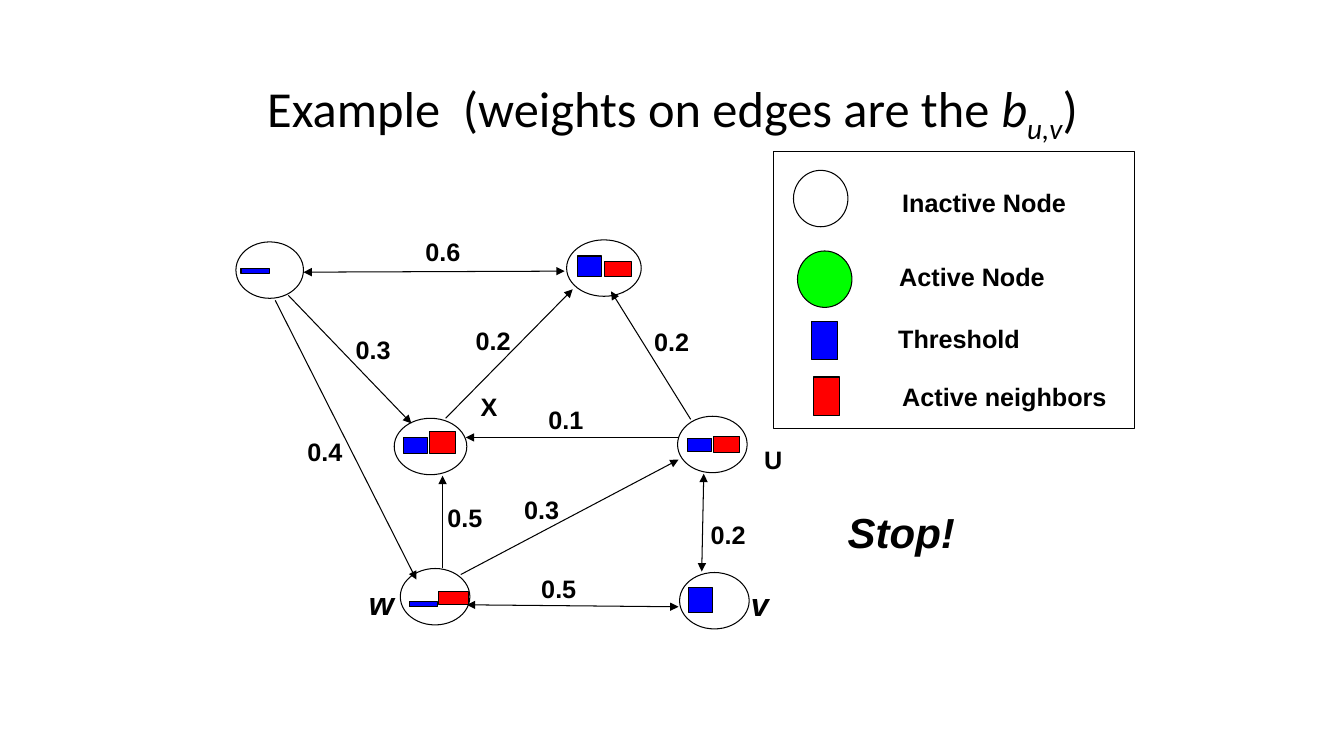
from dataclasses import dataclass
from typing import NamedTuple, Optional

from lxml import etree
from pptx import Presentation
from pptx import util as u
from pptx.dml.color import RGBColor
from pptx.enum import shapes, text
from pptx.oxml.ns import qn

PX = 9144  # EMU per px, 100 px to the inch


@dataclass(frozen=True)
class Theme:
    ink: str = "000000"
    inactive: str = "FFFFFF"
    active: str = "00FF00"
    threshold: str = "0000FF"
    neighbors: str = "FF0000"
    title_font: str = "Calibri"
    body_font: str = "Arial"
    title_size: int = 36
    stop_size: int = 30
    node_size: int = 23
    label_size: int = 18
    line_width: float = 0.75


class Box(NamedTuple):
    x: int
    y: int
    w: int
    h: int


class Node(NamedTuple):
    box: Box
    threshold: Box
    neighbors: Optional[Box] = None


class Edge(NamedTuple):
    start: tuple[int, int]
    end: tuple[int, int]
    weight: str
    label_at: tuple[int, int]
    both: bool = False


class Key(NamedTuple):
    shape: shapes.MSO_SHAPE
    box: Box
    fill: str
    label: str
    label_box: Box


class Label(NamedTuple):
    words: str
    box: Box
    size: int
    italic: bool = False


T = Theme()
OVAL, RECT = shapes.MSO_SHAPE.OVAL, shapes.MSO_SHAPE.RECTANGLE

NODES = [
    Node(Box(234, 240, 67, 56), Box(239, 266, 28, 5)),
    Node(Box(562, 238, 74, 56), Box(573, 254, 24, 20), Box(600, 259, 26, 15)),
    Node(Box(391, 415, 72, 56), Box(400, 434, 24, 16), Box(426, 428, 26, 22)),
    Node(Box(672, 413, 69, 56), Box(682, 435, 24, 13), Box(708, 433, 26, 16)),
    Node(Box(397, 564, 69, 56), Box(406, 597, 28, 5), Box(435, 587, 30, 13)),
    Node(Box(674, 568, 69, 56), Box(683, 583, 24, 25)),
]
EDGES = [
    Edge((463, 600), (673, 602), "0.5", (527, 564), both=True),
    Edge((457, 570), (673, 456), "0.3", (510, 486)),
    Edge((439, 564), (439, 472), "0.5", (434, 493)),
    Edge((672, 434), (462, 434), "0.1", (534, 396)),
    Edge((273, 298), (413, 575), "0.4", (295, 428)),
    Edge((286, 293), (408, 420), "0.3", (343, 327)),
    Edge((442, 415), (568, 287), "0.2", (462, 318)),
    Edge((301, 270), (560, 269), "0.6", (412, 230), both=True),
    Edge((685, 416), (606, 289), "0.2", (639, 319)),
    Edge((698, 470), (696, 567), "0.2", (695, 510), both=True),
]
LEGEND = Box(767, 150, 358, 275)
KEYS = [
    Key(OVAL, Box(787, 169, 54, 56), T.inactive, "Inactive Node", Box(885, 181, 183, 40)),
    Key(OVAL, Box(791, 249, 54, 56), T.active, "Active Node", Box(882, 254, 165, 40)),
    Key(RECT, Box(805, 319, 26, 38), T.threshold, "Threshold", Box(881, 316, 141, 40)),
    Key(RECT, Box(807, 374, 26, 38), T.neighbors, "Active neighbors", Box(885, 373, 223, 40)),
]
LABELS = [
    Label("X", Box(467, 383, 44, 40), T.label_size),
    Label("U", Box(748, 436, 44, 40), T.label_size),
    Label("w", Box(356, 574, 38, 48), T.node_size, True),
    Label("v", Box(735, 575, 34, 48), T.node_size, True),
    Label("Stop!", Box(831, 498, 143, 60), T.stop_size, True),
]


def emu(*lengths: int) -> list[u.Emu]:
    return [u.Emu(n * PX) for n in lengths]


def add_figure(s, kind: shapes.MSO_SHAPE, box: Box, fill: Optional[str] = None) -> None:
    sp = s.shapes.add_shape(kind, *emu(*box))
    sp.shadow.inherit = False
    if fill:
        sp.fill.solid()
        sp.fill.fore_color.rgb = RGBColor.from_string(fill)
    else:
        sp.fill.background()
    sp.line.color.rgb = RGBColor.from_string(T.ink)
    sp.line.width = u.Pt(T.line_width)


def style_run(r, font: str, size: int, bold: bool, italic: bool) -> None:
    r.font.name, r.font.size = font, u.Pt(size)
    r.font.bold, r.font.italic = bold, italic
    r.font.color.rgb = RGBColor.from_string(T.ink)


def add_label(s, label: Label, wrap: bool = True) -> None:
    tf = s.shapes.add_textbox(*emu(*label.box)).text_frame
    tf.word_wrap = wrap
    tf.text = label.words
    style_run(tf.paragraphs[0].runs[0], T.body_font, label.size, True, label.italic)


def add_edge(s, edge: Edge) -> None:
    line = s.shapes.add_connector(
        shapes.MSO_CONNECTOR.STRAIGHT, *emu(*edge.start, *edge.end))
    line.line.color.rgb = RGBColor.from_string(T.ink)
    line.line.width = u.Pt(T.line_width)
    ln = line.line._get_or_add_ln()
    for end in ("a:headEnd", "a:tailEnd") if edge.both else ("a:tailEnd",):
        etree.SubElement(ln, qn(end), type="triangle")
    etree.SubElement(line._element.spPr, qn("a:effectLst"))


def add_title(s) -> None:
    tf = s.shapes.add_textbox(*emu(217, 30, 900, 161)).text_frame
    tf.word_wrap = True
    tf.vertical_anchor = text.MSO_ANCHOR.MIDDLE
    p = tf.paragraphs[0]
    p.alignment = text.PP_ALIGN.CENTER
    for words, italic, subscript in [
        ("Example  (weights on edges are the ", False, False),
        ("b", True, False),
        ("u,v", True, True),
        (")", False, False),
    ]:
        r = p.add_run()
        r.text = words
        style_run(r, T.title_font, T.title_size, False, italic)
        if subscript:
            r._r.get_or_add_rPr().set("baseline", "-25000")


def main() -> None:
    prs = Presentation()
    prs.slide_width, prs.slide_height = emu(1333, 750)
    s = prs.slides.add_slide(prs.slide_layouts[6])
    add_title(s)

    # Legend
    add_figure(s, RECT, LEGEND)
    for key in KEYS:
        add_figure(s, key.shape, key.box, key.fill)
        add_label(s, Label(key.label, key.label_box, T.label_size), wrap=False)

    # Graph: nodes, then weighted edges, then the bars inside the nodes
    for node in NODES:
        add_figure(s, OVAL, node.box, T.inactive)
    for edge in EDGES:
        add_edge(s, edge)
        add_label(s, Label(edge.weight, Box(*edge.label_at, 67, 40), T.label_size))
    for node in NODES:
        add_figure(s, RECT, node.threshold, T.threshold)
        if node.neighbors:
            add_figure(s, RECT, node.neighbors, T.neighbors)

    # Node names and closing remark
    for label in LABELS:
        add_label(s, label)

    prs.save("out.pptx")


if __name__ == "__main__":
    main()
